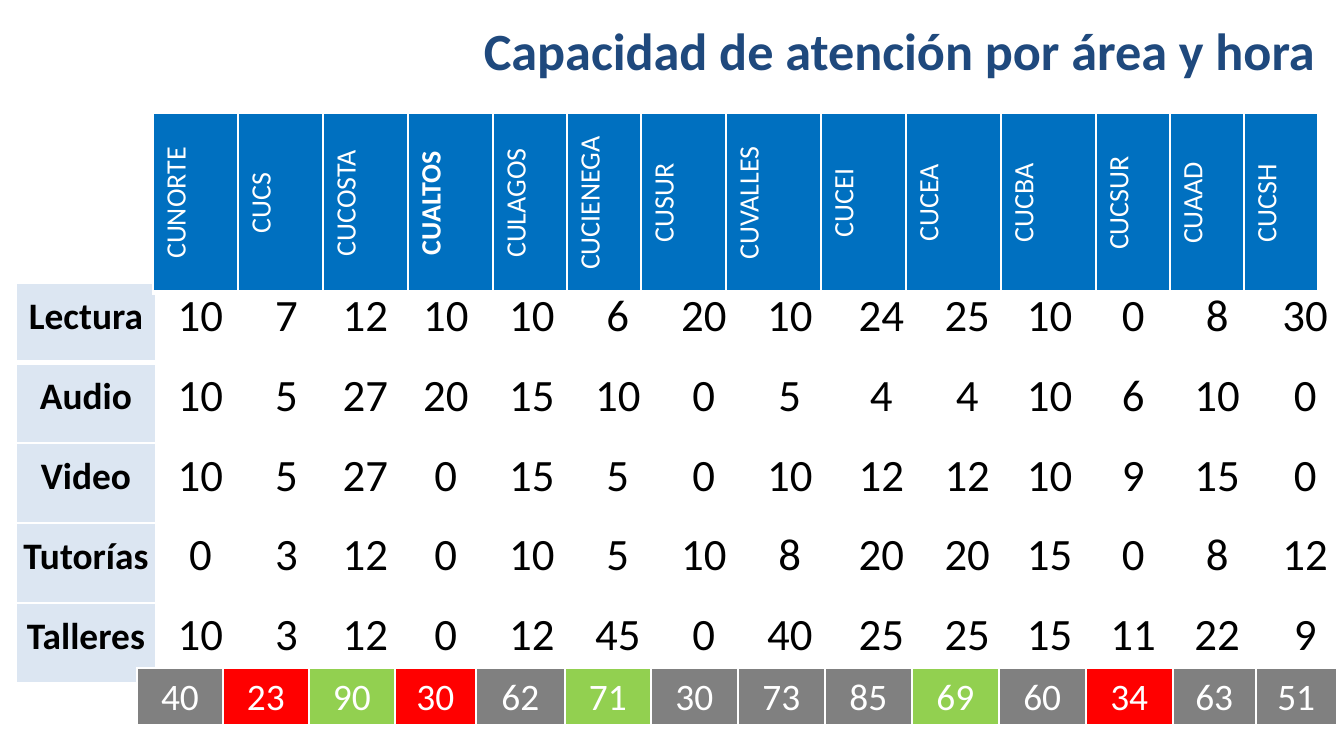
from lxml.etree import SubElement
from pptx import Presentation
from pptx.dml.color import RGBColor
from pptx.enum.text import MSO_ANCHOR, PP_ALIGN
from pptx.oxml.ns import qn
from pptx.util import Pt

EMU_PER_PX = 914400 / 134.4
FONT = "Calibri"
WHITE, BLACK, NAVY, BLUE = "FFFFFF", "000000", "1F497D", "0070C0"
PALE, GRAY, RED, GREEN = "DCE6F2", "808080", "FF0000", "92D050"

TITLE = "Capacidad de atención por área y hora"
CENTERS = ["CUNORTE", "CUCS", "CUCOSTA", "CUALTOS", "CULAGOS", "CUCIENEGA", "CUSUR",
           "CUVALLES", "CUCEI", "CUCEA", "CUCBA", "CUCSUR", "CUAAD", "CUCSH"]
HIGHLIGHTED = "CUALTOS"
AREAS = {
    "Lectura": [10, 7, 12, 10, 10, 6, 20, 10, 24, 25, 10, 0, 8, 30],
    "Audio": [10, 5, 27, 20, 15, 10, 0, 5, 4, 4, 10, 6, 10, 0],
    "Video": [10, 5, 27, 0, 15, 5, 0, 10, 12, 12, 10, 9, 15, 0],
    "Tutorías": [0, 3, 12, 0, 10, 5, 10, 8, 20, 20, 15, 0, 8, 12],
    "Talleres": [10, 3, 12, 0, 12, 45, 0, 40, 25, 25, 15, 11, 22, 9],
}
TOTALS = [40, 23, 90, 30, 62, 71, 30, 73, 85, 69, 60, 34, 63, 51]
TOTAL_FILLS = {23: RED, 34: RED, 90: GREEN, 71: GREEN, 69: GREEN}
LOW_CENTER = "CUALTOS"  # its total is red, while the other 30 is gray

# Column widths in px
AREA_WIDTHS = [140, 89, 83, 75, 86, 86, 86, 86, 86, 97, 75, 90, 77, 91, 85]
TOTAL_WIDTHS = [86, 86, 86, 81, 89, 86, 87, 87, 87, 87, 87, 87, 83, 81]
CENTER_WIDTHS = [85, 85, 85, 85, 74, 74, 85, 95, 85, 95, 95, 74, 74, 74]


def px(length):
    return round(length * EMU_PER_PX)


def color(value):
    return RGBColor.from_string(value)


def set_all(target, values):
    for name, value in values.items():
        setattr(target, name, value)


def format_text(frame, text, size, text_color, bold, align, spacing=None):
    paragraph = frame.paragraphs[0]
    set_all(paragraph, {"alignment": align, "line_spacing": spacing})
    run = paragraph.add_run()
    run.text = str(text)
    set_all(run.font, {"name": FONT, "size": Pt(size), "bold": bold})
    run.font.color.rgb = color(text_color)


def add_borders(cell, bottom_width):
    properties = cell._tc.get_or_add_tcPr()
    widths = {"a:lnL": 1, "a:lnR": 1, "a:lnT": 1, "a:lnB": bottom_width}
    for index, (side, width) in enumerate(widths.items()):
        line = properties.makeelement(qn(side), {"w": str(Pt(width))})
        fill = SubElement(line, qn("a:solidFill"))
        SubElement(fill, qn("a:srgbClr"), val=WHITE)
        properties.insert(index, line)


def add_grid(slide, left, top, widths, row_height, rows, insets, spacing=None, vertical=None):
    """Each cell is (text, size, text color, bold, fill); insets are (side, top) in px."""
    table = slide.shapes.add_table(len(rows), len(widths), px(left), px(top),
                                   px(sum(widths)), px(row_height * len(rows))).table
    set_all(table, {"first_row": False, "horz_banding": False})
    for column, width in zip(table.columns, widths):
        column.width = px(width)
    side, edge = map(px, insets)
    for row_index, row in enumerate(rows):
        table.rows[row_index].height = px(row_height)
        for column_index, (text, size, text_color, bold, fill) in enumerate(row):
            cell = table.cell(row_index, column_index)
            set_all(cell, {"vertical_anchor": MSO_ANCHOR.MIDDLE, "margin_left": side,
                           "margin_right": side, "margin_top": edge, "margin_bottom": edge})
            format_text(cell.text_frame, text, size, text_color, bold, PP_ALIGN.CENTER, spacing)
            cell.fill.solid()
            cell.fill.fore_color.rgb = color(fill)
            add_borders(cell, 3 if row_index == 0 else 1)
            if vertical:
                cell._tc.get_or_add_tcPr().set("vert", vertical)


def main():
    presentation = Presentation()
    set_all(presentation, {"slide_width": px(1344), "slide_height": px(756)})
    slide = presentation.slides.add_slide(presentation.slide_layouts[5])

    # Title
    title = slide.shapes.title
    set_all(title, {"left": px(118), "top": px(-13), "width": px(1210), "height": px(126)})
    title.text_frame.vertical_anchor = MSO_ANCHOR.MIDDLE
    format_text(title.text_frame, TITLE, 28, NAVY, True, PP_ALIGN.RIGHT)

    # Capacity by area
    area_rows = [[(area, 20, BLACK, True, PALE)] + [(value, 24, BLACK, False, WHITE) for value in values]
                 for area, values in AREAS.items()]
    add_grid(slide, 16, 283, AREA_WIDTHS, 80, area_rows, (0, 6), spacing=0.5)

    # Totals by center
    total_row = [(total, 20, WHITE, False,
                  RED if center == LOW_CENTER else TOTAL_FILLS.get(total, GRAY))
                 for center, total in zip(CENTERS, TOTALS)]
    add_grid(slide, 137, 668, TOTAL_WIDTHS, 59, [total_row], (13, 6))

    # Center names
    center_row = [(center, 15, WHITE, center == HIGHLIGHTED, BLUE) for center in CENTERS]
    add_grid(slide, 153, 113, CENTER_WIDTHS, 180, [center_row], (13, 6), vertical="vert270")

    presentation.save("out.pptx")


if __name__ == "__main__":
    main()
